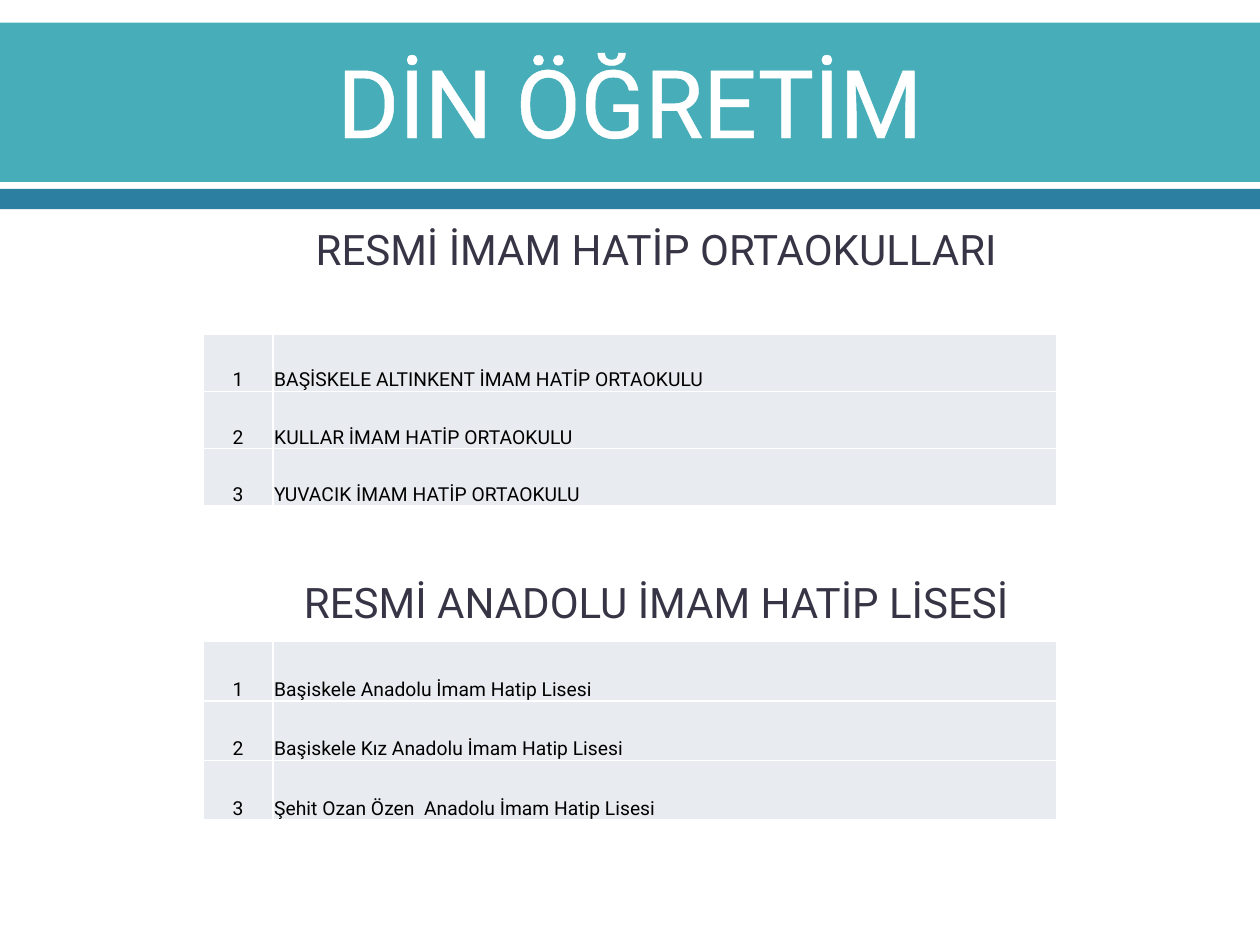
"""Build a slide listing the religious education schools in two tables."""
from dataclasses import dataclass

from lxml import etree
from pptx import Presentation
from pptx.dml.color import RGBColor
from pptx.enum.shapes import MSO_SHAPE
from pptx.enum.text import MSO_ANCHOR, PP_ALIGN
from pptx.oxml.ns import qn
from pptx.util import Pt

RECTANGLE = MSO_SHAPE.RECTANGLE
MIDDLE, BOTTOM = MSO_ANCHOR.MIDDLE, MSO_ANCHOR.BOTTOM
LEFT, CENTER = PP_ALIGN.LEFT, PP_ALIGN.CENTER
BORDER_TAGS = ("a:lnL", "a:lnR", "a:lnT", "a:lnB")


@dataclass(frozen=True)
class Theme:
    font: str = "Roboto"
    white: str = "FFFFFF"
    banner: str = "47AEB9"
    stripe: str = "2C7FA0"
    heading: str = "373545"
    cell_text: str = "000000"
    cell_fill: str = "E8ECF0"
    title_size: float = 54
    heading_size: float = 24
    cell_size: float = 11
    outline: float = 1.1
    border: float = 1


def apply(target, formats):
    for name, value in formats.items():
        setattr(target, name, value)


def add_line(parent, tag, width, color):
    line = etree.SubElement(parent, qn(tag), w=str(Pt(width)))
    fill = etree.SubElement(line, qn("a:solidFill"))
    etree.SubElement(fill, qn("a:srgbClr"), val=color)
    return line


class SlideBuilder:
    def __init__(self, slide, theme):
        self.slide = slide
        self.theme = theme

    def add_run(self, text_frame, text, size, color, alignment):
        paragraph = text_frame.paragraphs[0]
        paragraph.alignment = alignment
        run = paragraph.add_run()
        run.text = text
        apply(run.font, {"name": self.theme.font, "size": Pt(size)})
        run.font.color.rgb = RGBColor.from_string(color)
        return run

    def band(self, top, height, color):
        shape = self.slide.shapes.add_shape(RECTANGLE, 0, Pt(top), Pt(720), Pt(height))
        shape.shadow.inherit = False
        shape.fill.solid()
        shape.fill.fore_color.rgb = RGBColor.from_string(color)
        shape.line.fill.background()

    def text(self, box, text, size, color):
        shape = self.slide.shapes.add_textbox(*map(Pt, box))
        apply(shape.text_frame, {
            "word_wrap": True, "vertical_anchor": MIDDLE,
            "margin_left": 0, "margin_right": 0, "margin_top": 0, "margin_bottom": 0,
        })
        return self.add_run(shape.text_frame, text, size, color, CENTER)

    def title(self, box, text):
        theme = self.theme
        run = self.text(box, text, theme.title_size, theme.white)
        properties = run._r.get_or_add_rPr()
        properties.insert(0, add_line(properties, "a:ln", theme.outline, theme.white))

    def heading(self, top, text):
        self.text((150, top, 450, 28), text, self.theme.heading_size, self.theme.heading)

    def cell(self, cell, text, alignment):
        theme = self.theme
        apply(cell, {
            "vertical_anchor": BOTTOM, "margin_left": Pt(0.72),
            "margin_right": Pt(0.72), "margin_top": Pt(0.72), "margin_bottom": 0,
        })
        for tag in BORDER_TAGS:
            add_line(cell._tc.get_or_add_tcPr(), tag, theme.border, theme.white)
        cell.fill.solid()
        cell.fill.fore_color.rgb = RGBColor.from_string(theme.cell_fill)
        self.add_run(cell.text_frame, text, theme.cell_size, theme.cell_text, alignment)

    def school_table(self, top, row_height, schools):
        widths = (40, 447.6)
        frame = self.slide.shapes.add_table(
            len(schools), len(widths), Pt(116), Pt(top),
            Pt(sum(widths)), Pt(row_height * len(schools)))
        table = frame.table
        apply(table, {"first_row": False, "horz_banding": False})
        for column, width in zip(table.columns, widths):
            column.width = Pt(width)
        for number, (row, school) in enumerate(zip(table.rows, schools), 1):
            row.height = Pt(row_height)
            self.cell(row.cells[0], str(number), CENTER)
            self.cell(row.cells[1], school, LEFT)


def main():
    presentation = Presentation()
    apply(presentation, {"slide_width": Pt(720), "slide_height": Pt(540)})
    slide = presentation.slides.add_slide(presentation.slide_layouts[6])
    theme = Theme()
    builder = SlideBuilder(slide, theme)

    builder.band(13, 91, theme.banner)
    builder.band(108, 11.5, theme.stripe)
    builder.title((0, 14.4, 720, 85.7), "DİN ÖĞRETİM")

    builder.heading(128, "RESMİ İMAM HATİP ORTAOKULLARI")
    builder.school_table(190.8, 32.8, (
        "BAŞİSKELE ALTINKENT İMAM HATİP ORTAOKULU",
        "KULLAR İMAM HATİP ORTAOKULU",
        "YUVACIK İMAM HATİP ORTAOKULU",
    ))

    builder.heading(329.7, "RESMİ ANADOLU İMAM HATİP LİSESİ")
    builder.school_table(366.6, 34, (
        "Başiskele Anadolu İmam Hatip Lisesi",
        "Başiskele Kız Anadolu İmam Hatip Lisesi",
        "Şehit Ozan Özen  Anadolu İmam Hatip Lisesi",
    ))

    presentation.save("out.pptx")


if __name__ == "__main__":
    main()
